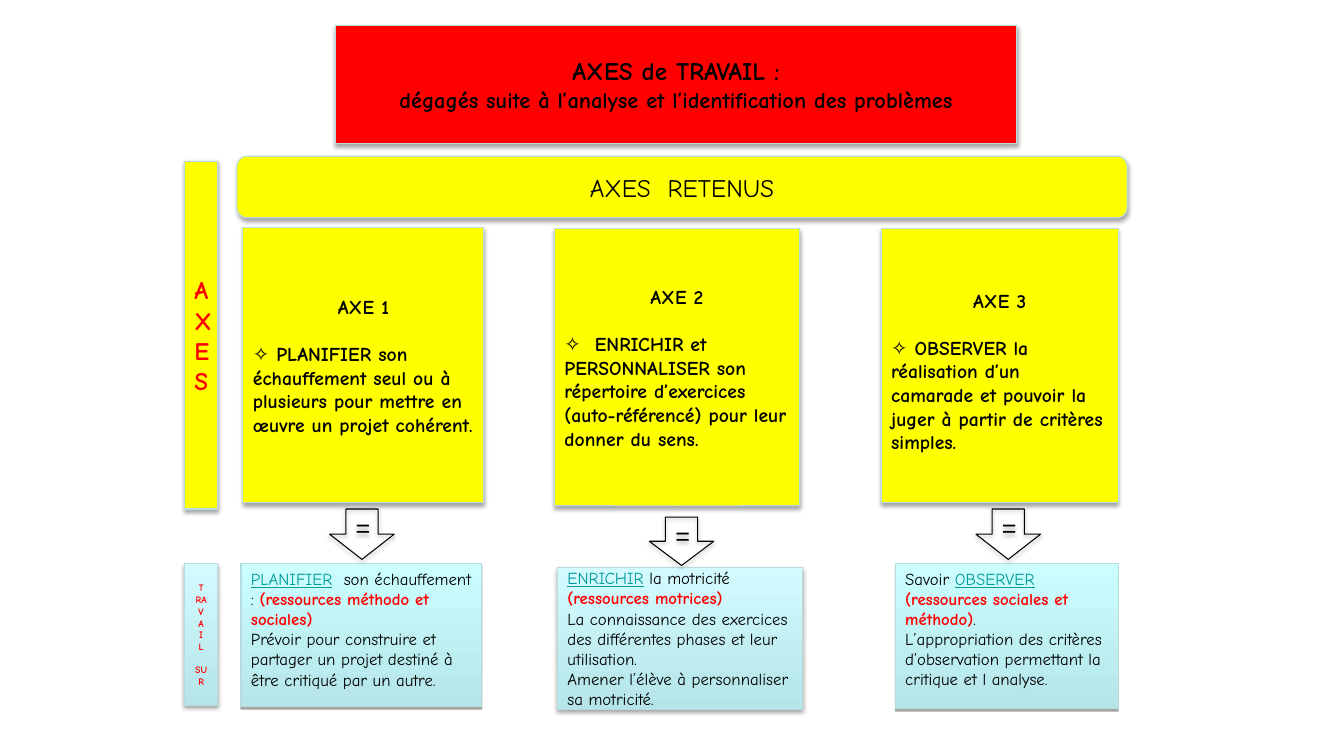
from lxml.etree import SubElement
from pptx import Presentation
from pptx.dml.color import RGBColor
from pptx.enum.shapes import MSO_SHAPE
from pptx.enum.text import MSO_ANCHOR, MSO_AUTO_SIZE, PP_ALIGN
from pptx.oxml.ns import qn
from pptx.util import Inches, Pt

RED = RGBColor(0xFF, 0x00, 0x00)
YELLOW = RGBColor(0xFF, 0xFF, 0x00)
BLACK = RGBColor(0x00, 0x00, 0x00)
TEAL = RGBColor(0x00, 0x99, 0x99)
EDGE = RGBColor(0xB6, 0xDC, 0xDF)
DEEP = RGBColor(0xB5, 0xE5, 0xE9)
PALE = RGBColor(0xCB, 0xFF, 0xFF)
LIGHT = RGBColor(0xD3, 0xFB, 0xFF)
FONT = "Comic Neue"

AXES = [
    ((2.41, 2.26, 2.39, 2.73), 0.05, "AXE 1",
     "✧ PLANIFIER son échauffement seul ou à plusieurs pour mettre en œuvre un projet cohérent."),
    ((5.5, 2.27, 2.43, 2.75), 0.05, "AXE 2",
     "✧  ENRICHIR et PERSONNALISER son répertoire d’exercices  (auto-référencé) pour leur donner du sens."),
    ((8.74, 2.27, 2.35, 2.72), 0.15, "AXE 3",
     "✧ OBSERVER la réalisation d’un camarade et pouvoir la juger à partir de critères simples."),
]
GOALS = [
    ((2.39, 5.59, 2.39, 1.42), PALE, 0, MSO_ANCHOR.TOP,
     [[("PLANIFIER", TEAL), ("  son échauffement : ", BLACK), ("(ressources méthodo et sociales)", RED)],
      [("Prévoir pour construire et partager un projet destiné à être critiqué par un autre.", BLACK)]]),
    ((8.88, 5.59, 2.21, 1.44), PALE, 0, MSO_ANCHOR.TOP,
     [[("Savoir ", BLACK), ("OBSERVER", TEAL), (" ", BLACK),
       ("(ressources sociales et méthodo)", RED), (".", BLACK)],
      [("L’appropriation des critères d’observation permettant la critique et l analyse.", BLACK)]]),
    ((5.53, 5.63, 2.43, 1.41), LIGHT, 3.1, MSO_ANCHOR.MIDDLE,
     [[("ENRICHIR", TEAL), (" la motricité ", BLACK), ("(ressources motrices)", RED)],
      [("La connaissance des exercices des différentes phases et leur utilisation.", BLACK)],
      [("Amener l’élève à personnaliser sa motricité.", BLACK)]]),
]
ARROWS = [(3.27, 5.05, 0.64, 0.5), (6.44, 5.13, 0.64, 0.48), (9.68, 5.05, 0.64, 0.5)]


def cast(shape, blur):
    """Give a shape a soft shadow straight below it."""
    shape.shadow.inherit = False
    effects = shape.element.spPr.find(qn("a:effectLst"))
    outer = SubElement(effects, qn("a:outerShdw"), blurRad=str(Pt(blur)), dist=str(Pt(1.8)),
                       dir="5400000", rotWithShape="0")
    tint = SubElement(outer, qn("a:srgbClr"), val="000000")
    SubElement(tint, qn("a:alpha"), val="35000")


def dress(shape, fill, edge=EDGE, blur=3.1, anchor=MSO_ANCHOR.MIDDLE):
    """Set fill, outline, shadow and text frame of a shape."""
    if fill is None:
        shape.fill.background()
    elif fill in (PALE, LIGHT):
        shape.fill.gradient()
        shape.fill.gradient_angle = 90
        for stop, tone in zip(shape.fill.gradient_stops, (DEEP, fill)):
            stop.color.rgb = tone
    else:
        shape.fill.solid()
        shape.fill.fore_color.rgb = fill
    shape.line.color.rgb = edge
    shape.line.width = Pt(0.75)
    cast(shape, blur)
    frame = shape.text_frame
    frame.word_wrap = True
    frame.auto_size = MSO_AUTO_SIZE.NONE
    frame.vertical_anchor = anchor
    return frame


def block(slide, kind, place, fill, **looks):
    """Add a dressed shape and return its text frame."""
    shape = slide.shapes.add_shape(kind, *map(Inches, place))
    return dress(shape, fill, **looks)


def write(frame, runs, size, align=PP_ALIGN.CENTER, bold=False, font=FONT):
    """Write one paragraph of coloured runs; teal is underlined."""
    para = frame.paragraphs[0]
    if para.runs:
        para = frame.add_paragraph()
    para.alignment = align
    for text, tone in runs:
        run = para.add_run()
        run.text = text
        run.font.name = font
        run.font.size = Pt(size)
        run.font.color.rgb = tone
        run.font.bold = bold
        run.font.underline = tone == TEAL
    return para


def head(slide):
    """Turn the title placeholder into the red ellipse."""
    title = slide.shapes.title
    title.left, title.top, title.width, title.height = map(Inches, (3.33, 0.25, 6.75, 1.17))
    shape = SubElement(title.element.spPr, qn("a:prstGeom"), prst="ellipse")
    SubElement(shape, qn("a:avLst"))
    frame = dress(title, RED)
    write(frame, [("AXES de TRAVAIL :", BLACK)], 18, bold=True)
    write(frame, [("dégagés suite à l’analyse et l’identification des problèmes", BLACK)], 16, bold=True)


def axis(slide, place, top, name, text):
    """Add one yellow box with its name and aim."""
    frame = block(slide, MSO_SHAPE.RECTANGLE, place, YELLOW)
    frame.margin_top = Inches(top)
    write(frame, [(name, BLACK)], 14, bold=True).space_after = Pt(17)
    write(frame, [(text, BLACK)], 14, PP_ALIGN.LEFT, bold=True)


def goal(slide, place, fill, blur, anchor, paras):
    """Add one blue box; its red runs are bold."""
    frame = block(slide, MSO_SHAPE.RECTANGLE, place, fill, blur=blur, anchor=anchor)
    for runs in paras:
        para = write(frame, runs, 12, PP_ALIGN.LEFT)
        for run, (_, tone) in zip(para.runs, runs):
            run.font.bold = tone == RED


def strip(slide, place, fill, parts, size):
    """Add a narrow side label and return its last paragraph."""
    frame = block(slide, MSO_SHAPE.RECTANGLE, place, fill)
    return [write(frame, [(part, RED)], size, bold=True) for part in parts][-1]


def arrow(slide, place):
    """Add a hollow down arrow with an equals sign."""
    frame = block(slide, MSO_SHAPE.DOWN_ARROW, place, None, edge=BLACK)
    write(frame, [("=", BLACK)], 18, font="Arial")


def main():
    """Build the slide and save it."""
    deck = Presentation()
    deck.slide_width, deck.slide_height = Inches(13.33), Inches(7.5)
    slide = deck.slides.add_slide(deck.slide_layouts[5])
    head(slide)
    for item in AXES:
        axis(slide, *item)
    banner = block(slide, MSO_SHAPE.ROUNDED_RECTANGLE, (2.35, 1.55, 8.83, 0.61), YELLOW)
    write(banner, [("AXES  RETENUS", BLACK)], 18)
    strip(slide, (1.83, 1.6, 0.33, 3.45), YELLOW, ["A", "X", "ES"], 18)
    for item in GOALS:
        goal(slide, *item)
    last = strip(slide, (1.83, 5.59, 0.33, 1.41), LIGHT, ["T", "RA", "V", "A", "I", "L", "SUR"], 7)
    last.space_before = Pt(8)
    for place in ARROWS:
        arrow(slide, place)
    deck.save("out.pptx")


if __name__ == "__main__":
    main()
